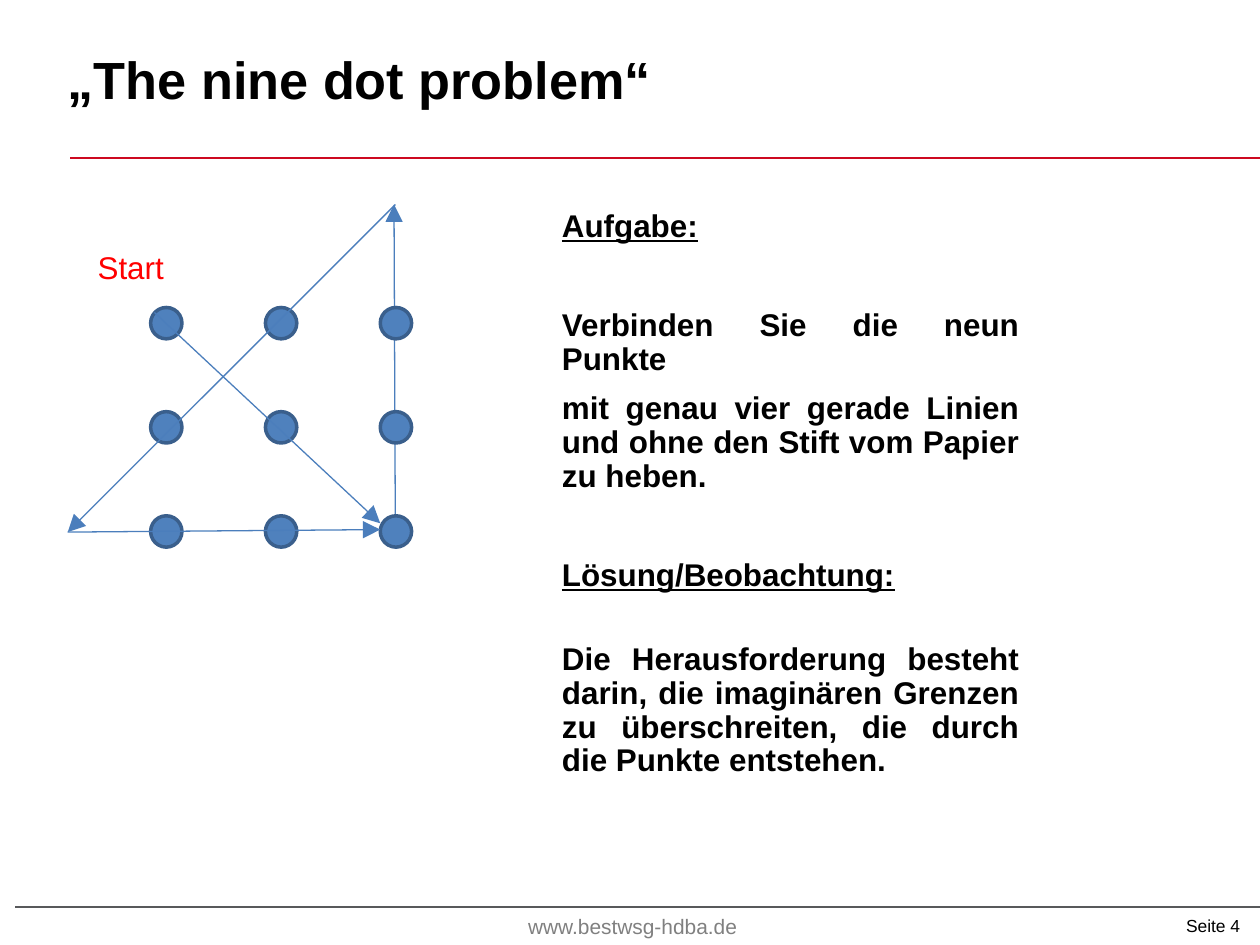
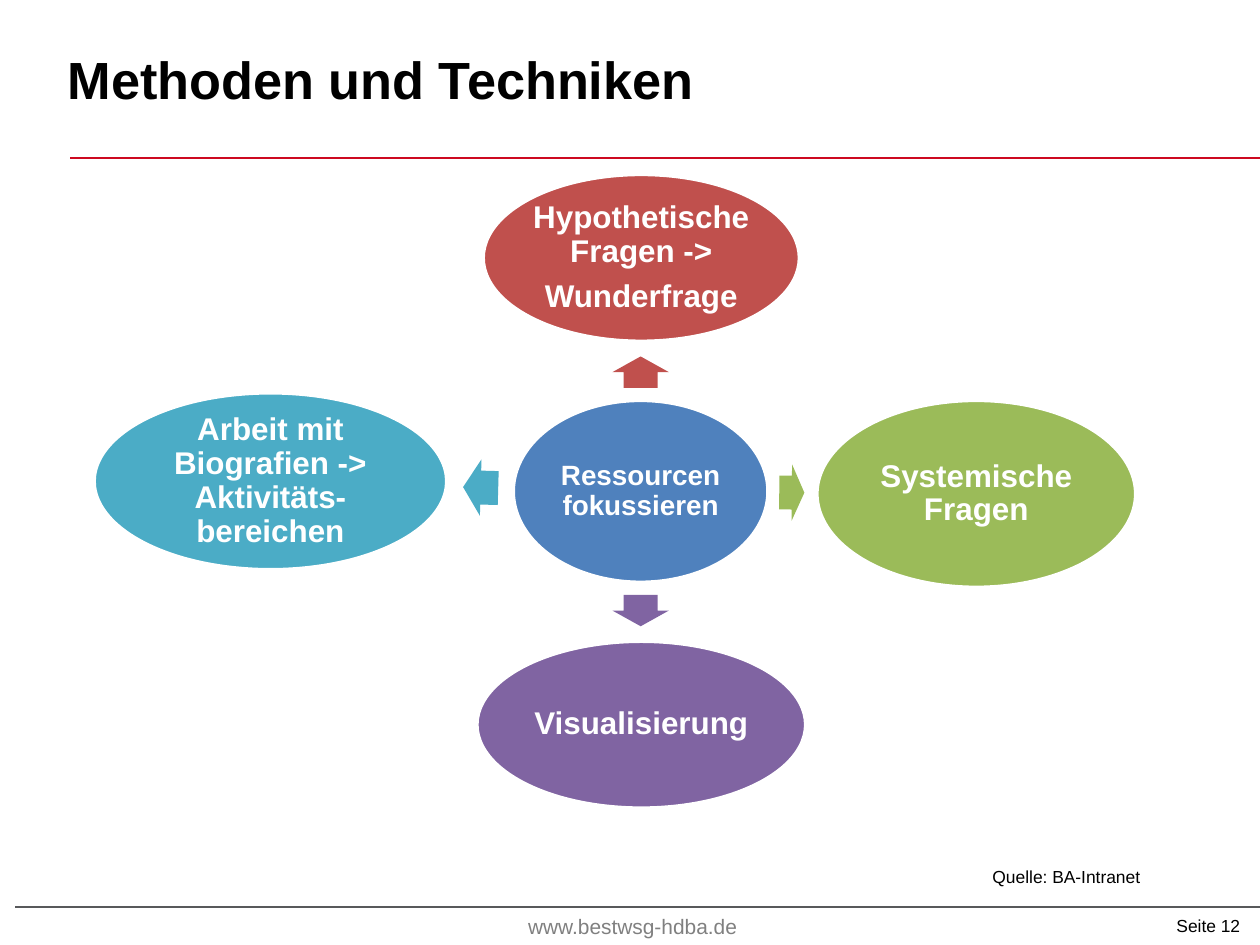
from lxml import etree
from pptx import Presentation
from pptx import util as u
from pptx.dml.color import RGBColor
from pptx.enum import shapes, text
from pptx.oxml import ns

# Scale: 100 px to the inch
PX = 9144
SLIDE_W, SLIDE_H = 1004, 753
FONT = "Arial"

BLACK = RGBColor(0x00, 0x00, 0x00)
WHITE = RGBColor(0xFF, 0xFF, 0xFF)
GREY = RGBColor(0x80, 0x80, 0x80)
DARK_GREY = RGBColor(0x58, 0x59, 0x5B)
RULE_RED = RGBColor(0xCD, 0x09, 0x20)
START_RED = RGBColor(0xFF, 0x00, 0x00)
BLUE = RGBColor(0x4F, 0x81, 0xBD)
DOT_EDGE = RGBColor(0x3A, 0x5F, 0x8C)
STROKE_BLUE = RGBColor(0x4B, 0x7E, 0xBC)
BRICK = RGBColor(0xC0, 0x50, 0x4D)
GREEN = RGBColor(0x9B, 0xBB, 0x59)
PURPLE = RGBColor(0x80, 0x64, 0xA2)
TEAL = RGBColor(0x4B, 0xAC, 0xC6)

FOOTER = "www.bestwsg-hdba.de"

# Nine dots: content
DOT_SIZE = 25
DOT_LEFT, DOT_TOP = 120, 245
DOT_PITCH_X, DOT_PITCH_Y = 91.5, 83
UPWARD_STROKE = (315, 419, 314, 163)
OTHER_STROKES = [
    (54, 424, 303, 422),
    (315, 163, 54, 424),
    (123, 249, 303, 417),
]
# Text, underlined, space before in points
TASK = [
    ("Aufgabe:", True, 0),
    ("Verbinden Sie die neun Punkte", False, 37),
    ("mit genau vier gerade Linien und ohne den Stift vom Papier zu heben.",
     False, 9),
    ("Lösung/Beobachtung:", True, 37.5),
    ("Die Herausforderung besteht darin, die imaginären Grenzen zu "
     "überschreiten, die durch die Punkte entstehen.", False, 28.5),
]

# Methods: text, size, colour, ellipse frame
METHODS = [
    ("Ressourcen fokussieren", 16, BLUE, (409, 319, 203, 145)),
    ("Hypothetische Fragen ->\nWunderfrage", 18, BRICK, (385, 139, 252, 133)),
    ("Systemische Fragen", 18, GREEN, (651, 319, 254, 149)),
    ("Visualisierung", 18, PURPLE, (380, 511, 262, 133)),
    ("Arbeit mit Biografien -> Aktivitäts-bereichen", 18, TEAL,
     (75, 313, 281, 141)),
]
# Colour, frame before turning, rotation
ARROWS = [
    (BRICK, (498, 274, 25, 45), 270),
    (GREEN, (621, 370, 20, 45), 0.5),
    (PURPLE, (498, 464, 25, 45), 90),
    (TEAL, (369, 366, 28, 45), 181.6),
]


def px(*lengths):
    return [u.Emu(round(length * PX)) for length in lengths]


def set_margins(frame, horizontal, vertical):
    frame.margin_left = frame.margin_right = px(horizontal)[0]
    frame.margin_top = frame.margin_bottom = px(vertical)[0]


def style(para, size, color, bold=False, align=text.PP_ALIGN.LEFT, spacing=0.9):
    para.alignment = align
    para.line_spacing = spacing
    for span in para.runs:
        span.font.name = FONT
        span.font.size = u.Pt(size)
        span.font.bold = bold
        span.font.color.rgb = color


def add_text(page, frame, words, size, color, margins=(10, 5), **look):
    box = page.shapes.add_textbox(*px(*frame))
    box.text_frame.word_wrap = True
    set_margins(box.text_frame, *margins)
    box.text_frame.text = words
    for para in box.text_frame.paragraphs:
        style(para, size, color, **look)
    return box


def add_line(page, ends, color, width, arrow=False):
    line = page.shapes.add_connector(shapes.MSO_CONNECTOR.STRAIGHT, *px(*ends))
    line.line.color.rgb = color
    line.line.width = u.Pt(width)
    if arrow:
        etree.SubElement(line.line._get_or_add_ln(), ns.qn("a:tailEnd"),
                         type="triangle", w="lg", len="lg")
    etree.SubElement(line._element.spPr, ns.qn("a:effectLst"))


def add_filled(page, kind, frame, fill, edge=None):
    shape = page.shapes.add_shape(kind, *px(*frame))
    shape.shadow.inherit = False
    shape.fill.solid()
    shape.fill.fore_color.rgb = fill
    if edge is None:
        shape.line.fill.background()
    else:
        shape.line.color.rgb = edge
        shape.line.width = u.Pt(2)
    return shape


def add_page(deck, title, number):
    """Blank page with the shared rules, footer and title."""
    page = deck.slides.add_slide(deck.slide_layouts[6])
    add_line(page, (12, 723, SLIDE_W, 723), DARK_GREY, 1.25)
    add_text(page, (897, 724, 101, 26), f"Seite {number}", 10, BLACK,
             align=text.PP_ALIGN.RIGHT, spacing=1.0)
    add_line(page, (56, 126, SLIDE_W, 126), RULE_RED, 1)
    add_text(page, (411, 725, 200, 28), FOOTER, 12, GREY)
    add_text(page, (54, 38, 902, 89), title, 30, BLACK, margins=(0, 0),
             bold=True, spacing=1.0)
    return page


def build_nine_dots(deck):
    page = add_page(deck, "„The nine dot problem“", 4)

    # Dots and strokes
    add_line(page, UPWARD_STROKE, STROKE_BLUE, 0.75, arrow=True)
    for row in range(3):
        for column in range(3):
            frame = (DOT_LEFT + column * DOT_PITCH_X,
                     DOT_TOP + row * DOT_PITCH_Y, DOT_SIZE, DOT_SIZE)
            add_filled(page, shapes.MSO_SHAPE.FLOWCHART_CONNECTOR, frame,
                       BLUE, DOT_EDGE)
    for ends in OTHER_STROKES:
        add_line(page, ends, STROKE_BLUE, 0.75, arrow=True)
    add_text(page, (68, 196, 77, 37), "Start", 18, START_RED)

    # Task and solution
    box = add_text(page, (438, 163, 384, 483),
                   "\n".join(words for words, _, _ in TASK), 18, BLACK,
                   bold=True, align=text.PP_ALIGN.JUSTIFY)
    for para, (_, underlined, before) in zip(box.text_frame.paragraphs, TASK):
        para.space_before = u.Pt(before)
        para.runs[0].font.underline = underlined


def build_methods(deck):
    page = add_page(deck, "Methoden und Techniken", 12)

    # Ellipses
    for words, size, color, frame in METHODS:
        ellipse = add_filled(page, shapes.MSO_SHAPE.OVAL, frame, color, WHITE)
        body = ellipse.text_frame
        body.word_wrap = True
        body.vertical_anchor = text.MSO_ANCHOR.MIDDLE
        set_margins(body, 1, 3)
        body.text = words
        for index, para in enumerate(body.paragraphs):
            style(para, size, WHITE, bold=True, align=text.PP_ALIGN.CENTER)
            para.space_before = u.Pt(6.3 if index else 0)

    # Arrows from the centre outwards
    for color, frame, rotation in ARROWS:
        arrow = add_filled(page, shapes.MSO_SHAPE.RIGHT_ARROW, frame, color)
        arrow.adjustments[0] = 0.6
        arrow.adjustments[1] = 0.5
        arrow.rotation = rotation

    add_text(page, (781, 687, 189, 25), "Quelle: BA-Intranet", 10, BLACK)


def main():
    deck = Presentation()
    deck.slide_width, deck.slide_height = px(SLIDE_W, SLIDE_H)
    build_nine_dots(deck)
    build_methods(deck)
    deck.save("out.pptx")


if __name__ == "__main__":
    main()
